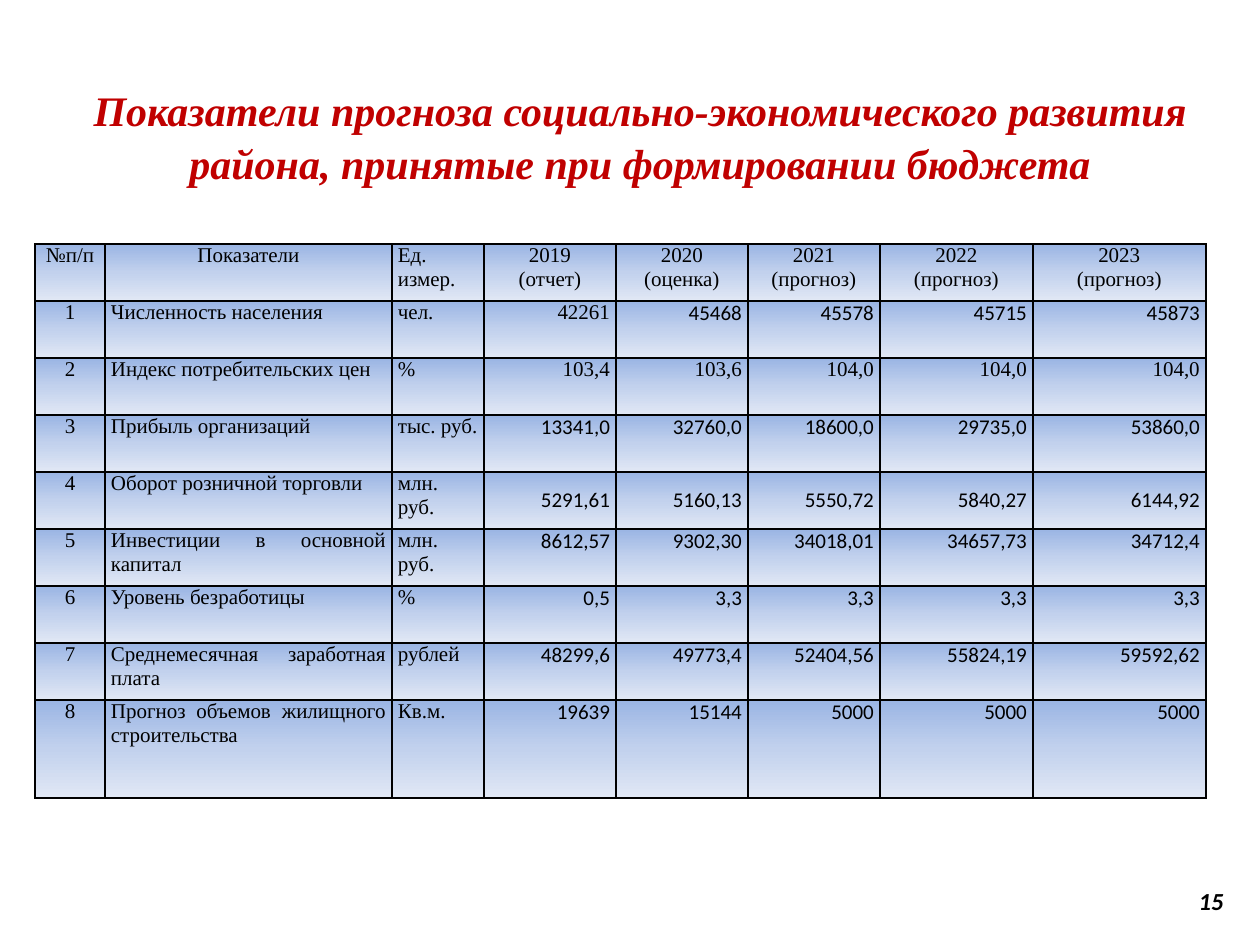
from dataclasses import dataclass

from pptx import Presentation
from pptx.dml.color import RGBColor
from pptx.enum.text import MSO_ANCHOR, MSO_AUTO_SIZE, PP_ALIGN
from pptx.oxml import parse_xml
from pptx.oxml.ns import nsdecls
from pptx.util import Emu, Pt

TITLE = ("Показатели прогноза социально-экономического развития района, "
         "принятые при формировании бюджета")
PAGE_NUMBER = "15"
HEADER = ["№п/п", "Показатели", "Ед. измер.", "2019\n(отчет)", "2020\n(оценка)",
          "2021\n(прогноз)", "2022\n(прогноз)", "2023\n(прогноз)"]
INDICATORS = [
    ("Численность населения", "чел.", "42261", "45468", "45578", "45715", "45873"),
    ("Индекс потребительских цен", "%", "103,4", "103,6", "104,0", "104,0", "104,0"),
    ("Прибыль организаций", "тыс. руб.", "13341,0", "32760,0", "18600,0", "29735,0", "53860,0"),
    ("Оборот розничной торговли", "млн. руб.",
     "5291,61", "5160,13", "5550,72", "5840,27", "6144,92"),
    ("Инвестиции в основной капитал", "млн. руб.",
     "8612,57", "9302,30", "34018,01", "34657,73", "34712,4"),
    ("Уровень безработицы", "%", "0,5", "3,3", "3,3", "3,3", "3,3"),
    ("Среднемесячная заработная плата", "рублей",
     "48299,6", "49773,4", "52404,56", "55824,19", "59592,62"),
    ("Прогноз объемов жилищного строительства", "Кв.м.",
     "19639", "15144", "5000", "5000", "5000"),
]
ROWS = [HEADER] + [[str(number), *row] for number, row in enumerate(INDICATORS, 1)]

FIRST_VALUE_COLUMN = 3
SERIF_VALUES = {(1, 3)} | {(2, column) for column in range(3, 8)}
MIDDLE_ROW = 4  # retail turnover: its values are centred vertically

# Lengths in px
PX = 914400 // 126
TITLE_BOX = (74, 76, 1132, 182)
NUMBER_BOX = (903, 876, 333, 50)
TABLE_LEFT, TABLE_TOP = 35, 244
COLUMN_WIDTHS = [70, 287, 92, 132, 132, 132, 153, 173]
ROW_HEIGHTS = [57] * 8 + [98]
CELL_INSET = 6


@dataclass(frozen=True)
class Theme:
    serif: str = "Times New Roman"
    sans: str = "Calibri"
    title: str = "C00000"
    ink: str = "000000"
    gradient: tuple = ((0, "9AB5E4"), (50, "C2D1ED"), (100, "E1E8F5"))
    title_size: int = 24
    number_size: int = 14
    cell_size: int = 12
    border: int = 1


THEME = Theme()


def px(length):
    return Emu(length * PX)


def place(shape, box):
    shape.left, shape.top, shape.width, shape.height = map(px, box)


def style(para, align, font_name, size, color, emphasis=False):
    para.alignment = align
    for span in para.runs:
        font = span.font
        font.name, font.size = font_name, Pt(size)
        font.bold = font.italic = emphasis
        font.color.rgb = RGBColor.from_string(color)


def paint_cell(cell):
    """Give the cell a black border and a top-to-bottom gradient."""
    properties = cell._tc.get_or_add_tcPr()
    for side in "LRTB":
        properties.append(parse_xml(
            f'<a:ln{side} {nsdecls("a")} w="{Pt(THEME.border)}"><a:solidFill>'
            f'<a:srgbClr val="{THEME.ink}"/></a:solidFill></a:ln{side}>'))
    stops = "".join(f'<a:gs pos="{position * 1000}"><a:srgbClr val="{color}"/></a:gs>'
                    for position, color in THEME.gradient)
    properties.append(parse_xml(
        f'<a:gradFill {nsdecls("a")} rotWithShape="1"><a:gsLst>{stops}</a:gsLst>'
        '<a:lin ang="5400000" scaled="0"/></a:gradFill>'))


def cell_alignment(row, column):
    if column == 0 or (row == 0 and column != 2):
        return PP_ALIGN.CENTER
    return PP_ALIGN.RIGHT if column >= FIRST_VALUE_COLUMN else PP_ALIGN.JUSTIFY


def fill_cell(cell, row, column, text):
    is_value = row > 0 and column >= FIRST_VALUE_COLUMN
    sans = is_value and (row, column) not in SERIF_VALUES
    cell.margin_left = cell.margin_right = px(CELL_INSET)
    cell.margin_top = cell.margin_bottom = 0
    middle = is_value and row == MIDDLE_ROW
    cell.vertical_anchor = MSO_ANCHOR.MIDDLE if middle else MSO_ANCHOR.TOP
    cell.text_frame.text = text
    for para in cell.text_frame.paragraphs:
        style(para, cell_alignment(row, column), THEME.sans if sans else THEME.serif,
              THEME.cell_size, THEME.ink)
    paint_cell(cell)


def add_title(page):
    title = page.shapes.title
    place(title, TITLE_BOX)
    frame = title.text_frame
    frame.text = TITLE
    frame.word_wrap = True
    frame.auto_size = MSO_AUTO_SIZE.NONE
    frame.vertical_anchor = MSO_ANCHOR.TOP
    para = frame.paragraphs[0]
    para.line_spacing = 1.05
    style(para, PP_ALIGN.CENTER, THEME.serif, THEME.title_size, THEME.title, emphasis=True)


def add_page_number(page):
    box = page.shapes.add_textbox(*map(px, NUMBER_BOX))
    frame = box.text_frame
    frame.text = PAGE_NUMBER
    frame.word_wrap = True
    frame.vertical_anchor = MSO_ANCHOR.MIDDLE
    style(frame.paragraphs[0], PP_ALIGN.RIGHT, THEME.sans, THEME.number_size,
          THEME.ink, emphasis=True)


def add_indicator_table(page):
    table = page.shapes.add_table(
        len(ROWS), len(HEADER), px(TABLE_LEFT), px(TABLE_TOP),
        px(sum(COLUMN_WIDTHS)), px(sum(ROW_HEIGHTS))).table
    table.first_row = table.horz_banding = False
    for column, width in zip(table.columns, COLUMN_WIDTHS):
        column.width = px(width)
    for row, height in zip(table.rows, ROW_HEIGHTS):
        row.height = px(height)
    for row, texts in enumerate(ROWS):
        for column, text in enumerate(texts):
            fill_cell(table.cell(row, column), row, column, text)


def main():
    deck = Presentation()
    deck.slide_width, deck.slide_height = px(1260), px(945)
    page = deck.slides.add_slide(deck.slide_layouts[5])
    add_title(page)
    add_page_number(page)
    add_indicator_table(page)
    deck.save("out.pptx")


if __name__ == "__main__":
    main()
